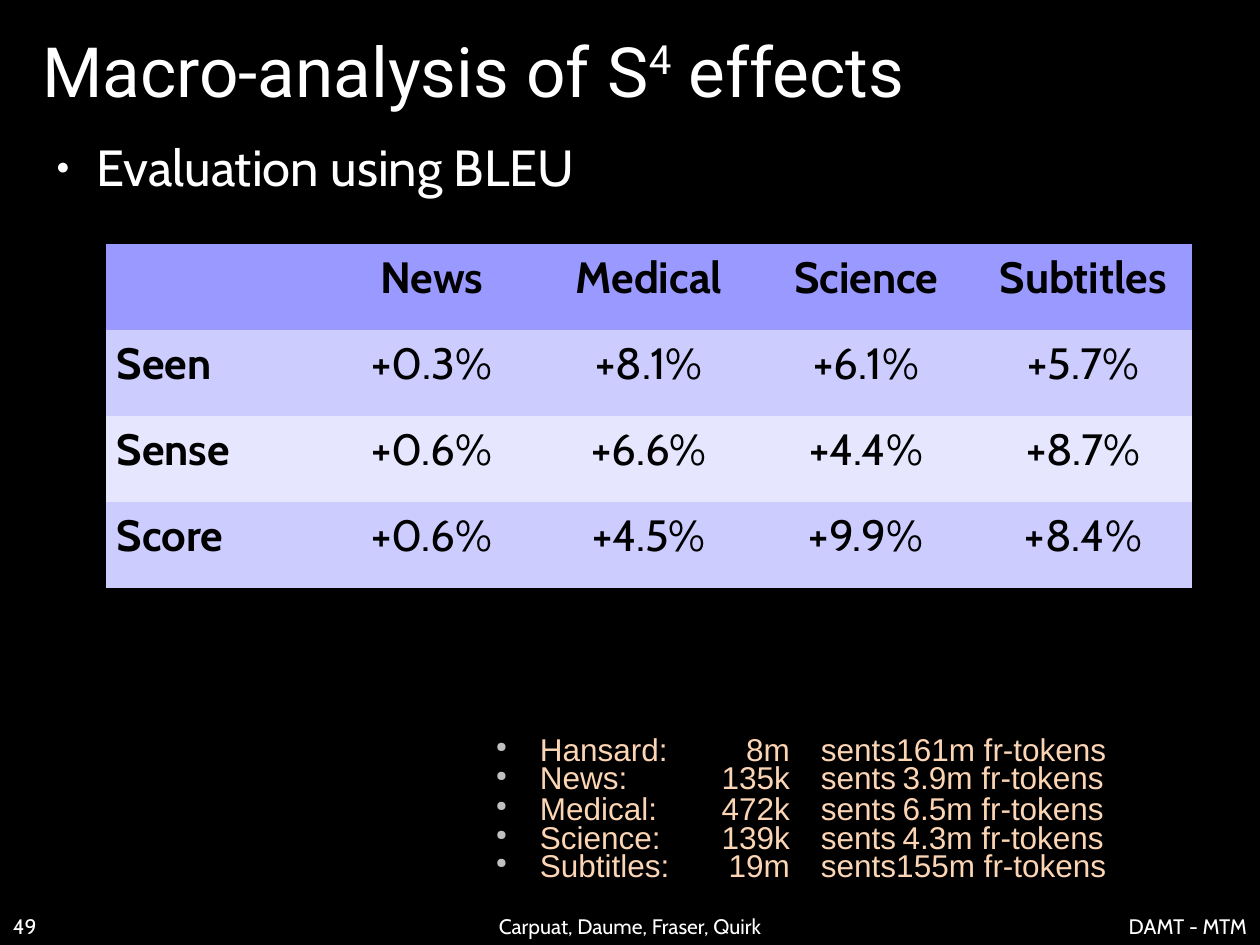
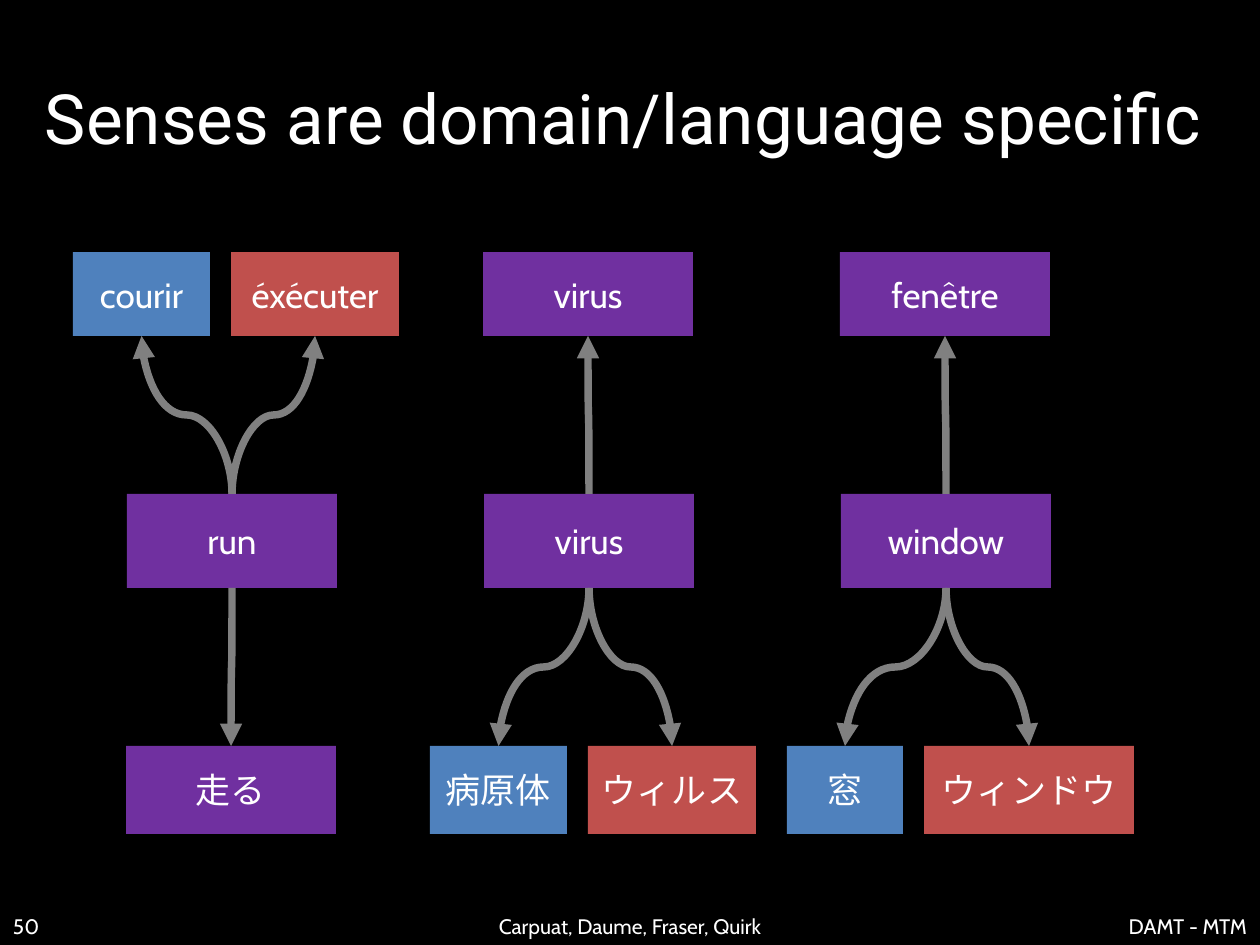
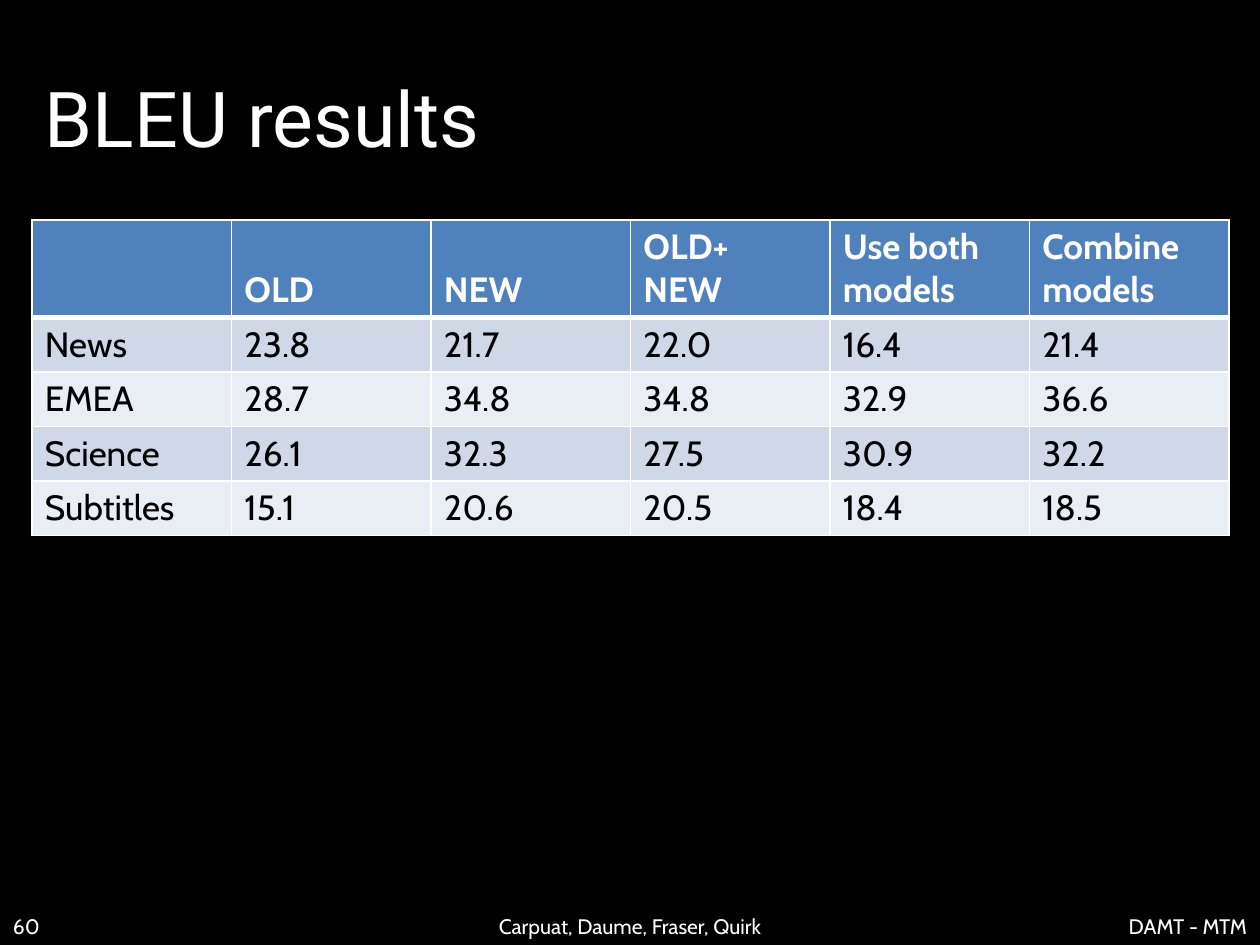
"""Build three slides on domain-specific word senses in machine translation."""
from dataclasses import dataclass
from typing import NamedTuple

from lxml import etree
from pptx import Presentation
from pptx.dml.color import RGBColor
from pptx.enum.shapes import MSO_CONNECTOR, MSO_SHAPE
from pptx.enum.text import MSO_ANCHOR, MSO_AUTO_SIZE, PP_ALIGN
from pptx.oxml.ns import qn
from pptx.util import Emu, Pt

CURVE, RECTANGLE = MSO_CONNECTOR.CURVE, MSO_SHAPE.RECTANGLE
LEFT, CENTER, RIGHT = PP_ALIGN.LEFT, PP_ALIGN.CENTER, PP_ALIGN.RIGHT
TOP, MIDDLE, BOTTOM = MSO_ANCHOR.TOP, MSO_ANCHOR.MIDDLE, MSO_ANCHOR.BOTTOM
NO_AUTOSIZE = MSO_AUTO_SIZE.NONE
TOP_SITE, BOTTOM_SITE = 0, 2
TITLE_AND_BODY, TITLE_ONLY = 1, 5
EMU_PER_PX = 914400 / 126

COLORS = {
    "background": "000000",
    "white": "FFFFFF",
    "black": "000000",
    "peach": "FCD5B5",
    "bullet": "C0C0C0",
    "arrow": "808080",
    "purple": "7030A0",
    "blue": "4F81BD",
    "red": "C0504D",
    "lilac_head": "9999FF",
    "lilac": "CCCCFF",
    "lilac_pale": "E6E6FF",
    "steel": "D0D8E8",
    "steel_pale": "E9EDF4",
}


class Area(NamedTuple):
    left: int
    top: int
    width: int
    height: int


class Margins(NamedTuple):
    left: int = 13
    top: int = 6
    right: int = 13
    bottom: int = 6


class Font(NamedTuple):
    size: float
    color: str = "white"
    name: str = "Cabin"
    bold: bool = False


class Bullet(NamedTuple):
    color: str
    indent: int
    hanging: int


class Tab(NamedTuple):
    position: int
    side: str


class Footer(NamedTuple):
    area: Area
    align: PP_ALIGN


class Corpus(NamedTuple):
    name: str
    sentences: str
    tokens: str
    space_after: float = 0


class WordBox(NamedTuple):
    key: str
    text: str
    left: int
    width: int
    color: str


class WordRow(NamedTuple):
    top: int
    height: int
    words: tuple[WordBox, ...]


@dataclass(frozen=True)
class TableLook:
    head_fill: str
    bands: tuple[str, str]
    head_font: Font
    label_font: Font
    value_font: Font
    margins: Margins
    align: PP_ALIGN
    head_anchor: MSO_ANCHOR
    line_spacing: float
    border: float
    head_border: float


TITLE_FONT = Font(39.6, name="Roboto")
BIG_TITLE_FONT = Font(44, name="Roboto")
BODY_FONT = Font(29)
WORD_FONT = Font(20)
CORPUS_FONT = Font(18, "peach", "Arial")
FOOTER_FONT = Font(12)
TITLE_AREA = Area(32, 38, 1197, 158)
FOOTERS = {
    "number": Footer(Area(0, 895, 294, 50), LEFT),
    "authors": Footer(Area(483, 895, 294, 50), CENTER),
    "event": Footer(Area(861, 895, 399, 50), RIGHT),
}
BODY_BULLET = Bullet("white", 54, 40)
CORPUS_BULLET = Bullet("bullet", 118, 44)
CORPUS_TABS = (Tab(368, "r"), Tab(399, "l"), Tab(708, "r"))
CORPORA = (
    Corpus("Hansard:", "8m", "161m"),
    Corpus("News:", "135k", "3.9m", 1.4),
    Corpus("Medical:", "472k", "6.5m"),
    Corpus("Science:", "139k", "4.3m"),
    Corpus("Subtitles:", "19m", "155m"),
)

EFFECTS_LOOK = TableLook(
    "lilac_head", ("lilac", "lilac_pale"),
    Font(25, "black", bold=True), Font(25, "black", bold=True), Font(25, "black"),
    Margins(11, 8, 11, 6), CENTER, TOP, 0.97, 0, 0,
)
EFFECTS = (
    ("", "News", "Medical", "Science", "Subtitles"),
    ("Seen", "+0.3%", "+8.1%", "+6.1%", "+5.7%"),
    ("Sense", "+0.6%", "+6.6%", "+4.4%", "+8.7%"),
    ("Score", "+0.6%", "+4.5%", "+9.9%", "+8.4%"),
)
RESULTS_LOOK = TableLook(
    "blue", ("steel", "steel_pale"),
    Font(20, bold=True), Font(20, "black"), Font(20, "black"),
    Margins(), LEFT, BOTTOM, 1.0, 1, 3,
)
RESULTS = (
    ("", "OLD", "NEW", "OLD+\nNEW", "Use both models", "Combine models"),
    ("News", "23.8", "21.7", "22.0", "16.4", "21.4"),
    ("EMEA", "28.7", "34.8", "34.8", "32.9", "36.6"),
    ("Science", "26.1", "32.3", "27.5", "30.9", "32.2"),
    ("Subtitles", "15.1", "20.6", "20.5", "18.4", "18.5"),
)

WORD_ROWS = (
    WordRow(494, 94, (
        WordBox("run", "run", 127, 210, "purple"),
        WordBox("virus", "virus", 484, 210, "purple"),
        WordBox("window", "window", 841, 210, "purple"),
    )),
    WordRow(746, 88, (
        WordBox("run_ja", "走る", 126, 210, "purple"),
        WordBox("pathogen_ja", "病原体", 430, 137, "blue"),
        WordBox("virus_ja", "ウィルス", 588, 168, "red"),
        WordBox("pane_ja", "窓", 787, 116, "blue"),
        WordBox("window_ja", "ウィンドウ", 924, 210, "red"),
    )),
    WordRow(252, 84, (
        WordBox("jog_fr", "courir", 73, 137, "blue"),
        WordBox("execute_fr", "éxécuter", 231, 168, "red"),
        WordBox("virus_fr", "virus", 483, 210, "purple"),
        WordBox("window_fr", "fenêtre", 840, 210, "purple"),
    )),
)
TRANSLATIONS = {
    "run": ("jog_fr", "execute_fr", "run_ja"),
    "virus": ("virus_fr", "pathogen_ja", "virus_ja"),
    "window": ("window_fr", "pane_ja", "window_ja"),
}


def px(length: float) -> Emu:
    """Turn pixels into EMU."""
    return Emu(round(length * EMU_PER_PX))


def rgb(color: str) -> RGBColor:
    """Look up a named colour."""
    return RGBColor.from_string(COLORS[color])


def scaled(area: Area) -> list[Emu]:
    """Turn an area into EMU lengths."""
    return [px(length) for length in area]


def add_node(parent, tag: str, **attributes):
    """Append an XML child with the given attributes."""
    return etree.SubElement(parent, qn(tag), attributes)


def add_fill(parent, color: str) -> None:
    """Append a solid fill to a line element."""
    add_node(add_node(parent, "a:solidFill"), "a:srgbClr", val=COLORS[color])


def write(para, text: str, font: Font, raised: bool = False) -> None:
    """Add formatted spans, broken at each newline."""
    for index, line in enumerate(text.split("\n")):
        if index:
            para.add_line_break()
        span = para.add_run()
        span.text = line
        span.font.size = Pt(font.size)
        span.font.name = font.name
        span.font.bold = font.bold
        span.font.color.rgb = rgb(font.color)
        if raised:
            span.font._element.set("baseline", "33000")


def set_margins(target, margins: Margins) -> None:
    """Set the inner margins of a text frame or cell."""
    target.margin_left, target.margin_top, target.margin_right, target.margin_bottom = map(px, margins)


def prepare_frame(box, anchor: MSO_ANCHOR, margins: Margins = Margins()):
    """Set up wrapping text and return its frame."""
    frame = box.text_frame
    frame.word_wrap = True
    frame.auto_size = NO_AUTOSIZE
    frame.vertical_anchor = anchor
    set_margins(frame, margins)
    return frame


def set_bullet(para, bullet: Bullet, tabs: tuple[Tab, ...] = ()) -> None:
    """Give a paragraph a hanging bullet and tab stops."""
    properties = para._p.get_or_add_pPr()
    properties.set("marL", str(px(bullet.indent)))
    properties.set("indent", str(px(-bullet.hanging)))
    add_node(add_node(properties, "a:buClr"), "a:srgbClr", val=COLORS[bullet.color])
    add_node(properties, "a:buSzPct", val="45000")
    add_node(properties, "a:buChar", char="●")
    if tabs:
        stops = add_node(properties, "a:tabLst")
        for tab in tabs:
            add_node(stops, "a:tab", pos=str(px(tab.position)), algn=tab.side)


def place(box, area: Area) -> None:
    """Move and resize a placeholder."""
    box.left, box.top, box.width, box.height = scaled(area)


def add_page(deck, layout: int, title_area: Area = TITLE_AREA):
    """Add a page and return it with its title paragraph."""
    page = deck.slides.add_slide(deck.slide_layouts[layout])
    place(page.shapes.title, title_area)
    para = prepare_frame(page.shapes.title, MIDDLE).paragraphs[0]
    para.alignment = LEFT
    return page, para


def add_footers(page, number: str) -> None:
    """Write the page number, authors and event along the bottom."""
    texts = {"number": number, "authors": "Carpuat, Daume, Fraser, Quirk", "event": "DAMT - MTM"}
    for key, footer in FOOTERS.items():
        box = page.shapes.add_textbox(*scaled(footer.area))
        para = prepare_frame(box, BOTTOM).paragraphs[0]
        para.alignment = footer.align
        write(para, texts[key], FOOTER_FONT)


def set_borders(cell, widths: dict[str, float]) -> None:
    """Draw white cell borders, or none where the width is zero."""
    properties = cell._tc.get_or_add_tcPr()
    for side, width in widths.items():
        line = add_node(properties, f"a:ln{side}", w=str(Pt(width)))
        if width:
            add_fill(line, "white")
        else:
            add_node(line, "a:noFill")


def fill_cell(cell, text: str, row: int, column: int, look: TableLook) -> None:
    """Format one table cell and write its text."""
    set_borders(cell, {
        "L": look.border,
        "R": look.border,
        "T": look.head_border if row == 1 else look.border,
        "B": look.head_border if row == 0 else look.border,
    })
    cell.fill.solid()
    cell.fill.fore_color.rgb = rgb(look.bands[(row - 1) % 2] if row else look.head_fill)
    cell.vertical_anchor = TOP if row else look.head_anchor
    set_margins(cell, look.margins)
    if text:
        para = cell.text_frame.paragraphs[0]
        para.alignment = look.align if column else LEFT
        para.line_spacing = look.line_spacing
        body_font = look.value_font if column else look.label_font
        write(para, text, body_font if row else look.head_font)


def add_grid(page, left: int, top: int, width: int, head_height: int, row_height: int,
             rows: tuple[tuple[str, ...], ...], look: TableLook) -> None:
    """Add a table with equal columns."""
    height = head_height + row_height * (len(rows) - 1)
    area = Area(left, top, width, height)
    table = page.shapes.add_table(len(rows), len(rows[0]), *scaled(area)).table
    for column in table.columns:
        column.width = px(width / len(rows[0]))
    for row, texts in enumerate(rows):
        table.rows[row].height = px(row_height if row else head_height)
        for column, text in enumerate(texts):
            fill_cell(table.cell(row, column), text, row, column, look)


def add_word(page, row: WordRow, word: WordBox):
    """Draw one coloured word box."""
    box = page.shapes.add_shape(RECTANGLE, *scaled(Area(word.left, row.top, word.width, row.height)))
    box.shadow.inherit = False
    box.fill.solid()
    box.fill.fore_color.rgb = rgb(word.color)
    box.line.fill.background()
    para = prepare_frame(box, MIDDLE).paragraphs[0]
    para.alignment = CENTER
    write(para, word.text, WORD_FONT)
    return box


def add_curve(page, source, target) -> None:
    """Join two boxes with a vertical curved arrow."""
    down = target.top > source.top
    start_x, end_x = (box.left + box.width // 2 for box in (source, target))
    start_y = source.top + source.height if down else source.top
    end_y = target.top if down else target.top + target.height
    arrow = page.shapes.add_connector(CURVE, start_x, start_y, end_x, end_y)
    arrow.begin_connect(source, BOTTOM_SITE if down else TOP_SITE)
    arrow.end_connect(target, TOP_SITE if down else BOTTOM_SITE)
    arrow.line.color.rgb = rgb("arrow")
    arrow.line.width = Pt(4.25)
    add_node(arrow.line._get_or_add_ln(), "a:tailEnd", type="triangle")

    rightward = end_x > start_x
    length, spread = abs(end_y - start_y), abs(end_x - start_x)
    arrow.left, arrow.top = (start_x + end_x - length) // 2, (start_y + end_y - spread) // 2
    arrow.width, arrow.height = length, spread
    properties = arrow._element.spPr
    frame = properties.find(qn("a:xfrm"))
    frame.set("rot", str((90 if down != rightward else 270) * 60000))
    frame.set("flipH", str(int(rightward)))
    frame.set("flipV", str(int(not down)))
    add_node(properties, "a:effectLst")


def add_corpora(page) -> None:
    """List the corpus sizes in tabbed columns."""
    box = page.shapes.add_textbox(*scaled(Area(411, 725, 822, 302)))
    frame = prepare_frame(box, TOP, Margins(11, 14, 11, 5))
    for index, corpus in enumerate(CORPORA):
        para = frame.add_paragraph() if index else frame.paragraphs[0]
        para.level = 1
        para.line_spacing = 0.75
        para.space_after = Pt(corpus.space_after)
        set_bullet(para, CORPUS_BULLET, CORPUS_TABS)
        write(para, f"{corpus.name}\t{corpus.sentences}\tsents\t{corpus.tokens} fr-tokens", CORPUS_FONT)


def build_effects(deck) -> None:
    """Build the page on the macro-analysis."""
    page, title = add_page(deck, TITLE_AND_BODY, Area(29, 18, 1201, 103))
    write(title, "Macro-analysis of S", TITLE_FONT)
    write(title, "4", TITLE_FONT, raised=True)
    write(title, " effects", TITLE_FONT)
    body = page.placeholders[1]
    place(body, Area(29, 130, 1201, 685))
    para = prepare_frame(body, TOP).paragraphs[0]
    set_bullet(para, BODY_BULLET)
    write(para, "Evaluation using BLEU", BODY_FONT)
    add_grid(page, 106, 244, 1086, 86, 86, EFFECTS, EFFECTS_LOOK)
    add_corpora(page)
    add_footers(page, "49")


def build_senses(deck) -> None:
    """Build the page that maps words to their translations."""
    page, title = add_page(deck, TITLE_ONLY)
    write(title, "Senses are domain/language specific", TITLE_FONT)
    boxes = {word.key: add_word(page, row, word) for row in WORD_ROWS for word in row.words}
    for source, targets in TRANSLATIONS.items():
        for target in targets:
            add_curve(page, boxes[source], boxes[target])
    add_footers(page, "50")


def build_results(deck) -> None:
    """Build the page with the score table."""
    page, title = add_page(deck, TITLE_ONLY)
    write(title, "BLEU results", BIG_TITLE_FONT)
    add_grid(page, 32, 220, 1197, 88, 52, RESULTS, RESULTS_LOOK)
    add_footers(page, "60")


def main() -> None:
    """Build and save the deck."""
    deck = Presentation()
    deck.slide_width, deck.slide_height = px(1260), px(945)
    background = deck.slide_master.background.fill
    background.solid()
    background.fore_color.rgb = rgb("background")
    build_effects(deck)
    build_senses(deck)
    build_results(deck)
    deck.save("out.pptx")


if __name__ == "__main__":
    main()
